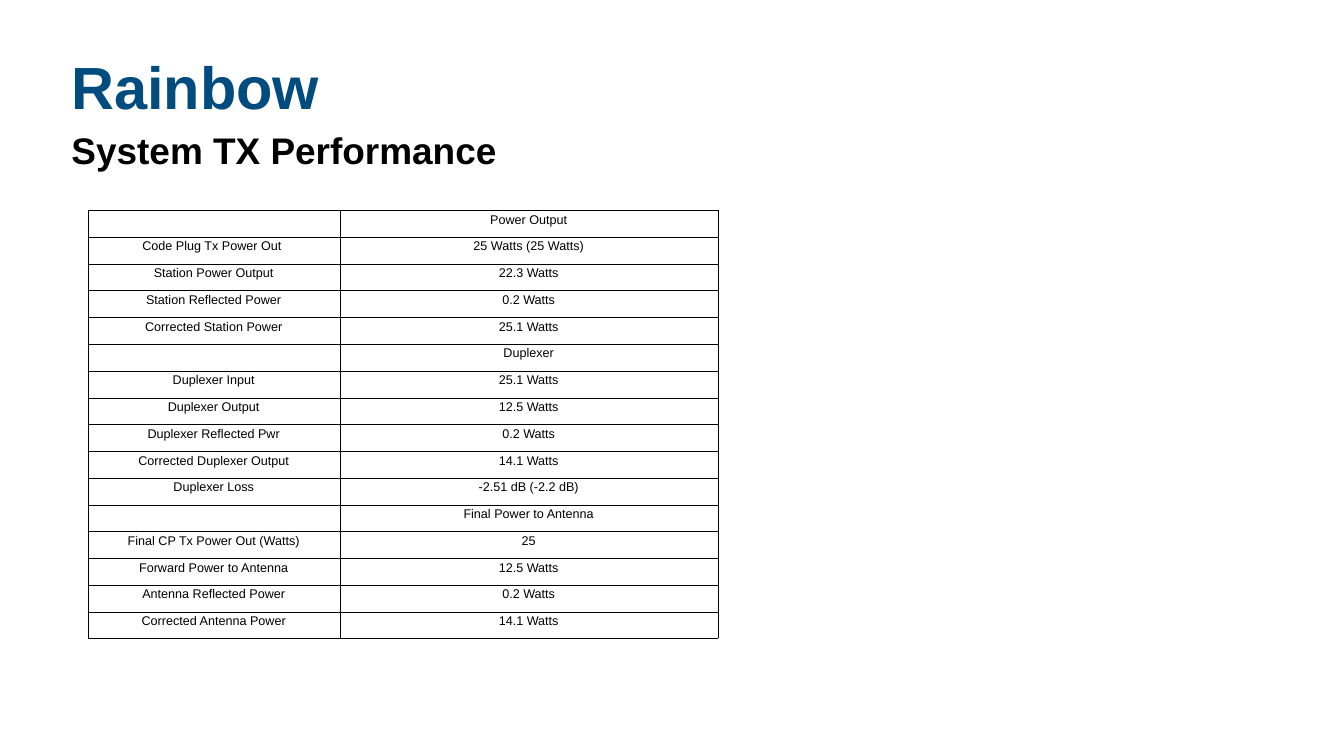
import pptx
import pptx.util
import pptx.dml.color
import pptx.enum.text
import pptx.oxml
import pptx.oxml.ns

Inch, Pt = pptx.util.Inches, pptx.util.Pt
Align, Anchor = pptx.enum.text.PP_ALIGN, pptx.enum.text.MSO_ANCHOR

WIDE, HIGH = 26.67, 15
HUES = {"title": "004C7F", "text": "000000", "line": "000000"}
HEADS = [
    {"text": "Rainbow", "top": 1.04, "high": 1.57, "hue": "title",
     "size": 85, "space": 0.8},
    {"text": "System TX Performance", "top": 2.46, "high": 1.02, "hue": "text",
     "size": 52.8, "space": 1.0},
]
GROUPS = [
    ("Power Output", [
        ("Code Plug Tx Power Out ", "25 Watts (25 Watts)"),
        ("Station Power Output", "22.3 Watts"),
        ("Station Reflected Power", "0.2 Watts"),
        ("Corrected Station Power", "25.1 Watts"),
    ]),
    ("Duplexer", [
        ("Duplexer Input", "25.1 Watts"),
        ("Duplexer Output", "12.5 Watts"),
        ("Duplexer Reflected Pwr", "0.2 Watts"),
        ("Corrected Duplexer Output", "14.1 Watts"),
        ("Duplexer Loss", "-2.51 dB (-2.2 dB)"),
    ]),
    ("Final Power to Antenna", [
        ("Final CP Tx Power Out (Watts)", "25"),
        ("Forward Power to Antenna", "12.5 Watts"),
        ("Antenna Reflected Power", "0.2 Watts"),
        ("Corrected Antenna Power", "14.1 Watts"),
    ]),
]
GRID = {"left": 1.74, "top": 4.17, "wide": 12.5, "high": 8.5}
SHARES = [0.4, 0.6]


def style(font, size, hue, bold):
    for name, value in {"name": "Arial", "size": Pt(size), "bold": bold}.items():
        setattr(font, name, value)
    font.color.rgb = pptx.dml.color.RGBColor.from_string(HUES[hue])


def border(cell):
    props = cell._tc.get_or_add_tcPr()
    for side in ("lnL", "lnR", "lnT", "lnB"):
        props.append(pptx.oxml.parse_xml(
            f'<a:{side} {pptx.oxml.ns.nsdecls("a")} w="{Pt(0.06)}"><a:solidFill>'
            f'<a:srgbClr val="{HUES["line"]}"/></a:solidFill></a:{side}>'))


def head(slide, item):
    left = 1.32
    box = slide.shapes.add_textbox(Inch(left), Inch(item["top"]),
                                   Inch(WIDE - 2 * left), Inch(item["high"]))
    frame = box.text_frame
    frame.word_wrap = True
    frame.vertical_anchor = Anchor.MIDDLE
    para = frame.paragraphs[0]
    para.line_spacing = item["space"]
    run = para.add_run()
    run.text = item["text"]
    style(run.font, item["size"], item["hue"], True)


def grid(slide):
    rows = [row for name, body in GROUPS for row in [("", name), *body]]
    table = slide.shapes.add_table(
        len(rows), len(SHARES), *(Inch(size) for size in GRID.values())).table
    table.first_row = table.horz_banding = False
    for col, share in zip(table.columns, SHARES):
        col.width = Inch(GRID["wide"] * share)
    for line, row in zip(table.rows, rows):
        line.height = Inch(GRID["high"] / len(rows))
        for cell, text in zip(line.cells, row):
            border(cell)
            cell.fill.background()
            if text:
                para = cell.text_frame.paragraphs[0]
                para.alignment = Align.CENTER
                run = para.add_run()
                run.text = text
                style(run.font, 18, "text", False)


def main():
    deck = pptx.Presentation()
    deck.slide_width, deck.slide_height = Inch(WIDE), Inch(HIGH)
    slide = deck.slides.add_slide(deck.slide_layouts[6])
    for item in HEADS:
        head(slide, item)
    grid(slide)
    deck.save("out.pptx")


if __name__ == "__main__":
    main()
